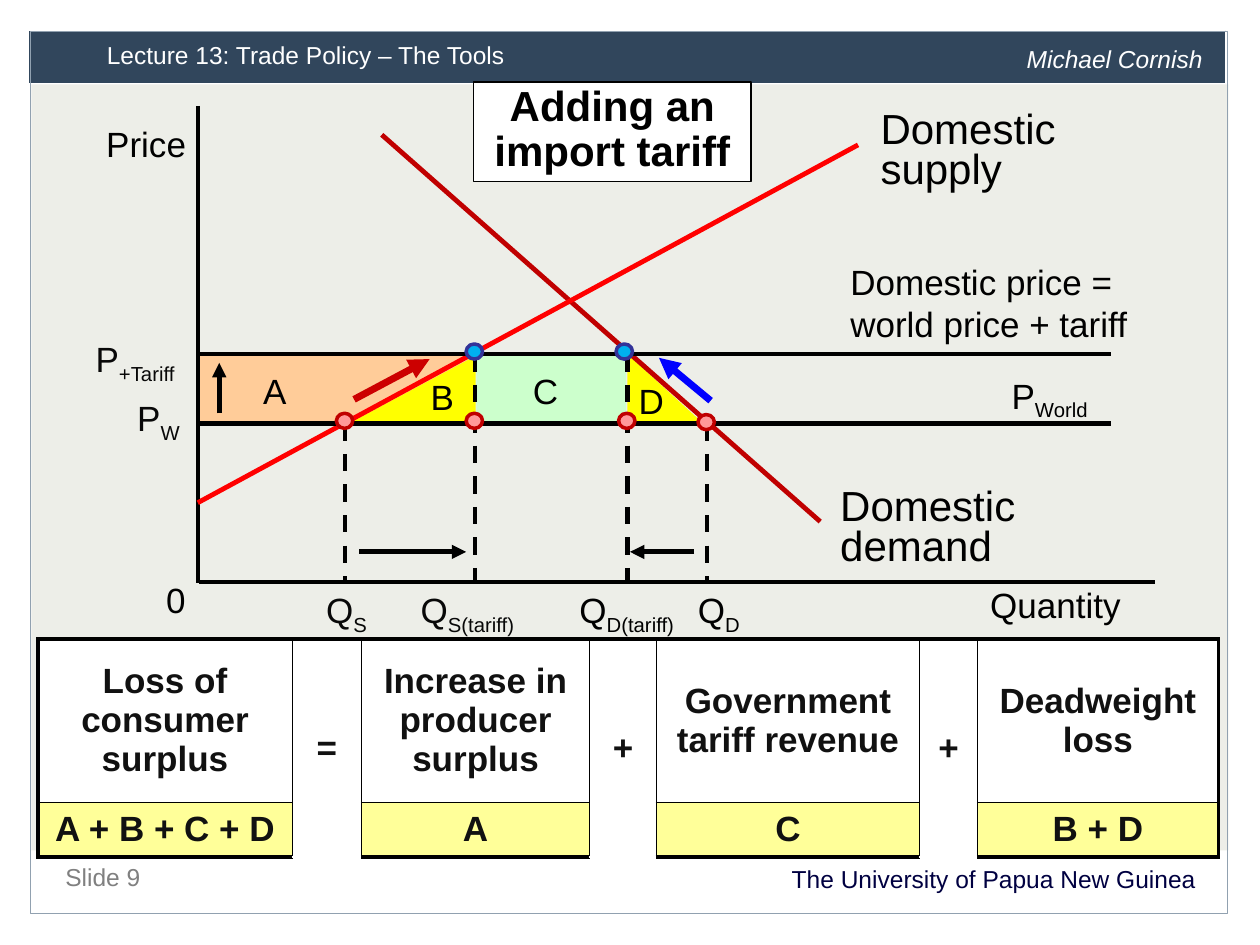
from lxml.etree import SubElement
from pptx import Presentation
from pptx.dml.color import RGBColor
from pptx.enum.dml import MSO_LINE as Dash
from pptx.enum.shapes import MSO_CONNECTOR as Connector, MSO_SHAPE as Shape
from pptx.enum.text import MSO_ANCHOR as Anchor, MSO_AUTO_SIZE as AutoSize, PP_ALIGN as Align
from pptx.oxml.ns import qn
from pptx.util import Pt

PX = 9144  # EMU in one px, 100 px to the inch
BLACK, WHITE, INK = "000000", "FFFFFF", "080808"
RED, DARK_RED, YELLOW, PEACH = "FF0000", "C00000", "FFFF00", "FFCC99"

# Key positions of the diagram
AXIS_X, AXIS_Y = 157, 462
TARIFF_Y, WORLD_Y = 281, 336
SUPPLY_X, SUPPLY_TARIFF_X, DEMAND_TARIFF_X, DEMAND_X = 274, 377, 498, 561
BAND = WORLD_Y - TARIFF_Y


def rgb(value):
    return RGBColor.from_string(value)


def px(*lengths):
    return [length * PX for length in lengths]


class SlideBuilder:
    def __init__(self, deck, font="Arial"):
        self.font = font
        self.slide = deck.slides.add_slide(deck.slide_layouts[5])
        self.shapes = self.slide.shapes

    def paint(self, item, fill=None, line=None, width=0.75):
        if fill:
            item.fill.solid()
            item.fill.fore_color.rgb = rgb(fill)
        else:
            item.fill.background()
        if line:
            item.line.color.rgb = rgb(line)
            item.line.width = Pt(width)
        else:
            item.line.fill.background()

    def set_text(self, frame, text, sub="", size=20, color=BLACK, align=Align.LEFT,
                 spacing=None, **style):
        """Fill a text frame with one paragraph; sub is set as a subscript."""
        frame.word_wrap = True
        para = frame.paragraphs[0]
        para.alignment = align
        para.line_spacing = spacing
        for part in filter(None, (text, sub)):
            span = para.add_run()
            span.text = part
            values = {"name": self.font, "size": Pt(size), **style}
            for name, value in values.items():
                setattr(span.font, name, value)
            span.font.color.rgb = rgb(color)
        if sub:
            span._r.get_or_add_rPr().set("baseline", "-25000")

    def text(self, box, text, sub="", **style):
        self.set_text(self.shapes.add_textbox(*px(*box)).text_frame, text, sub, **style)

    def title(self, box, text):
        title = self.shapes.title
        self.shapes._spTree.append(title._element)  # bring in front of the panels
        title.left, title.top, title.width, title.height = px(*box)
        self.paint(title, WHITE, BLACK)
        frame = title.text_frame
        frame.auto_size = AutoSize.NONE
        frame.vertical_anchor = Anchor.BOTTOM
        self.set_text(frame, text, size=24, align=Align.CENTER, spacing=Pt(26), bold=True)

    def shape(self, kind, box, fill=None, line=None, width=0.75, rotation=0, flip=False):
        shape = self.shapes.add_shape(kind, *px(*box))
        shape.shadow.inherit = False
        shape.rotation = rotation
        if flip:
            shape._element.spPr.find(qn("a:xfrm")).set("flipV", "1")
        self.paint(shape, fill, line, width)

    def dot(self, x, y, fill, line):
        self.shape(Shape.OVAL, (x - 7, y - 6, 13, 12), fill, line, 2)

    def line(self, ends, color=BLACK, width=2.5, dashed=False, arrow=False):
        line = self.shapes.add_connector(Connector.STRAIGHT, *px(*ends))
        line.line.color.rgb = rgb(color)
        line.line.width = Pt(width)
        if dashed:
            line.line.dash_style = Dash.DASH
        if arrow:
            SubElement(line.line._get_or_add_ln(), qn("a:tailEnd"), type="triangle")
        SubElement(line._element.spPr, qn("a:effectLst"))

    def border(self, cell, side, width):
        edge = SubElement(cell._tc.get_or_add_tcPr(), qn(f"a:ln{side}"), w=str(Pt(width)))
        SubElement(SubElement(edge, qn("a:solidFill")), qn("a:srgbClr"), val=BLACK)

    def equation(self, box, widths, heights, rows):
        """Table of terms; the odd columns hold operators spanning both rows."""
        table = self.shapes.add_table(len(rows), len(widths), *px(*box)).table
        table.first_row = table.horz_banding = False
        for column, width in zip(table.columns, widths):
            column.width = width * PX
        for row, height in zip(table.rows, heights):
            row.height = height * PX
        last_row, last_column = len(rows) - 1, len(widths) - 1
        for r, row in enumerate(rows):
            for c, text in enumerate(row):
                cell = table.cell(r, c)
                operator = c % 2
                outer = {"L": c == 0, "R": c == last_column, "T": r == 0, "B": r == last_row}
                for side, thick in outer.items():
                    if thick or side in "LR" or not operator:
                        self.border(cell, side, 2.25 if thick else 1)
                cell.fill.solid()
                cell.fill.fore_color.rgb = rgb("FFFF99" if r and not operator else WHITE)
                cell.vertical_anchor = Anchor.MIDDLE
                cell.margin_left = cell.margin_right = 11 * PX
                cell.margin_top = cell.margin_bottom = 0
                if text:
                    self.set_text(cell.text_frame, text, color="111111",
                                  align=Align.CENTER, bold=True)
        for c in range(1, last_column, 2):
            table.cell(0, c).merge(table.cell(last_row, c))


def add_frame(page):
    page.shape(Shape.RECTANGLE, (25, 67, 950, 608), "EDEEE8")
    page.shape(Shape.RECTANGLE, (23, 24, 950, 42), "31465C", WHITE, 0.5)
    page.text((42, 683, 917, 32), "The University of Papua New Guinea", size=14,
              color="000041", align=Align.RIGHT, spacing=Pt(15))
    page.text((42, 675, 433, 34), "Slide 9", size=14, color="808080", spacing=Pt(20))
    page.text((75, 25, 613, 37), "Lecture 13: Trade Policy – The Tools", size=14,
              color=WHITE, spacing=Pt(18))
    page.shape(Shape.RECTANGLE, (24, 25, 950, 700), line="91A1B0")
    page.text((805, 28, 164, 37), "Michael Cornish", size=14, color=WHITE,
              spacing=Pt(18), italic=True)
    page.title((376, 65, 220, 79), "Adding an import tariff")


def add_areas(page):
    page.shape(Shape.RIGHT_TRIANGLE, (299, 257, BAND, 102), YELLOW, rotation=270)
    page.shape(Shape.RIGHT_TRIANGLE, (DEMAND_TARIFF_X, TARIFF_Y, 60, BAND), YELLOW)
    page.shape(Shape.RECTANGLE, (378, TARIFF_Y, 119, BAND), "CCFFCC")
    page.shape(Shape.RIGHT_TRIANGLE, (276, TARIFF_Y, 103, BAND), PEACH, PEACH, flip=True)
    page.shape(Shape.RECTANGLE, (AXIS_X, TARIFF_Y, 119, BAND), PEACH, PEACH)


def add_lines(page):
    page.line((AXIS_X, 84, AXIS_X, AXIS_Y + 1))
    page.line((AXIS_X + 1, AXIS_Y, 917, AXIS_Y))
    page.line((303, 107, 651, 414), DARK_RED, 2.75)
    page.line((AXIS_X, 399, 681, 115), RED, 2.75)
    for price in (WORLD_Y, TARIFF_Y):
        page.line((AXIS_X, price, 882, price))
    for x, top in ((SUPPLY_X, WORLD_Y), (SUPPLY_TARIFF_X, TARIFF_Y),
                   (DEMAND_TARIFF_X, TARIFF_Y), (DEMAND_X, WORLD_Y)):
        page.line((x, top, x, AXIS_Y), dashed=True)
    for ends, color, width in (
        ((564, 318, 523, 284), "0000FF", 4),
        ((281, 317, 341, 285), "CC0000", 4),
        ((174, 328, 174, 288), BLACK, 2.75),
        ((285, 438, 370, 438), BLACK, 2.75),
        ((551, 438, 500, 438), BLACK, 2.75),
    ):
        page.line(ends, color, width, arrow=True)
    for x, y in ((SUPPLY_X, 334), (SUPPLY_TARIFF_X, 334), (DEMAND_TARIFF_X, 334), (DEMAND_X, 335)):
        page.dot(x, y, "FF9999", DARK_RED)
    for x in (SUPPLY_TARIFF_X, DEMAND_TARIFF_X - 2):
        page.dot(x, 279, "00B0F0", "333399")


def add_labels(page):
    page.text((51, 92, 130, 44), "Price", align=Align.CENTER)
    page.text((776, 469, 142, 33), "Quantity", spacing=0.65)
    page.text((665, 202, 285, 77), "Domestic price = world price + tariff")
    for left, top, name in ((689, 84, "supply"), (657, 383, "demand")):
        page.text((left, top, 186, 75), f"Domestic {name}", size=24, spacing=0.8)
    for left, top, width, text, sub, color in (
        (122, 454, 43, "0", "", BLACK),
        (66, 263, 111, "P", "+Tariff", INK),
        (99, 310, 68, "P", "W", INK),
        (793, 292, 102, "P", "World", BLACK),
        (199, 288, 68, "A", "", BLACK),
        (332, 293, 54, "B", "", BLACK),
        (413, 288, 59, "C", "", BLACK),
        (497, 296, 55, "D", "", BLACK),
        (324, AXIS_Y, 110, "Q", "S(tariff)", INK),
        (249, AXIS_Y, 55, "Q", "S", INK),
        (544, AXIS_Y, 55, "Q", "D", BLACK),
        (450, AXIS_Y, 110, "Q", "D(tariff)", BLACK),
    ):
        page.text((left, top, width, 44), text, sub, color=color)


def main():
    deck = Presentation()
    deck.slide_width, deck.slide_height = px(1000, 750)
    page = SlideBuilder(deck)
    add_frame(page)
    add_areas(page)
    add_lines(page)
    add_labels(page)
    page.equation((30, 507, 937, 173), (202, 55, 181, 53, 209, 46, 191), (130, 43), (
        ("Loss of consumer surplus", "=", "Increase in producer surplus", "+",
         "Government tariff revenue", "+", "Deadweight loss"),
        ("A + B + C + D", "", "A", "", "C", "", "B + D"),
    ))
    deck.save("out.pptx")


if __name__ == "__main__":
    main()
